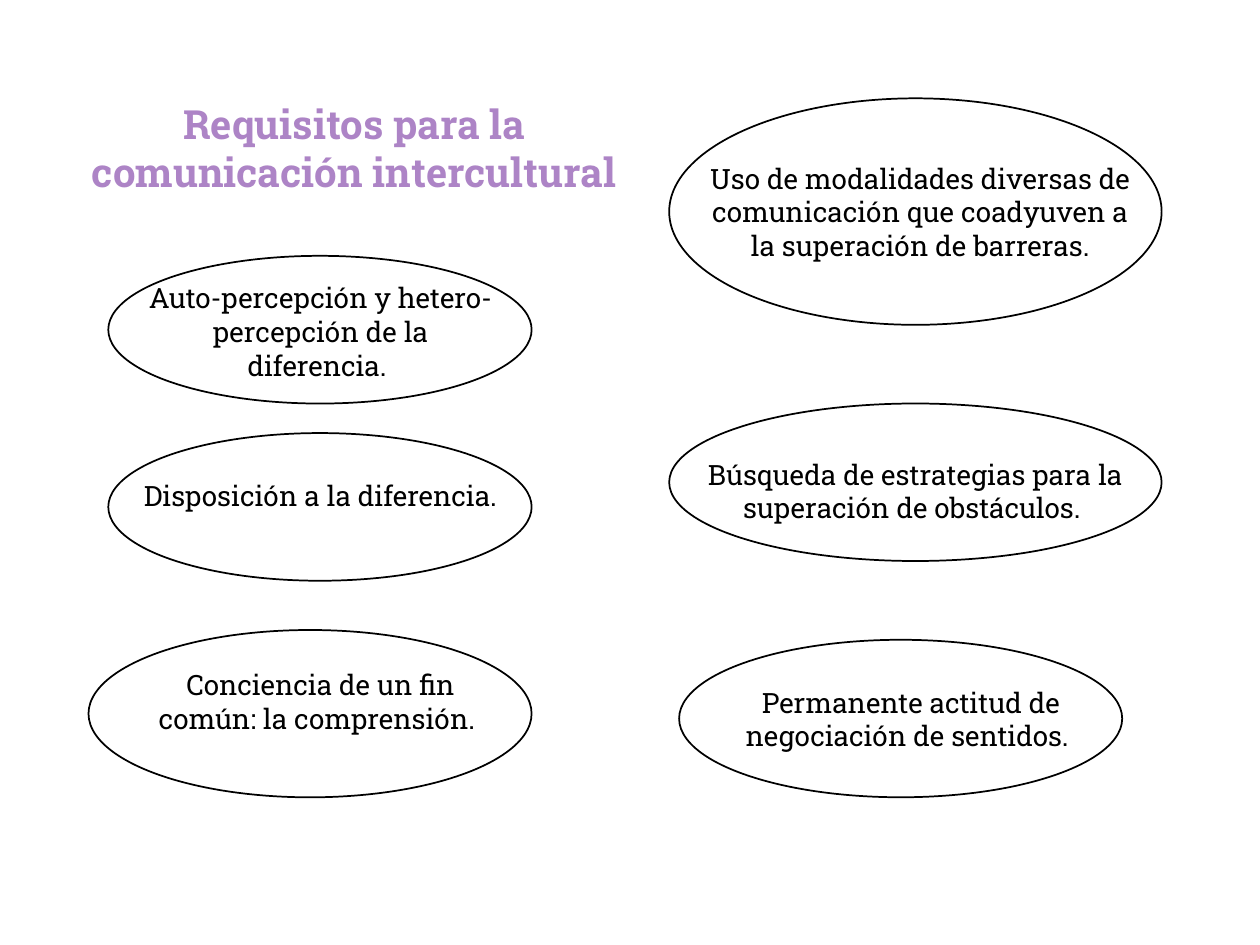
from pptx import Presentation
from pptx.dml.color import RGBColor
from pptx.enum.shapes import MSO_SHAPE as Shape
from pptx.enum.text import MSO_AUTO_SIZE as Fit, PP_ALIGN as Align
from pptx.util import Pt


def color(code):
    return RGBColor.from_string(code)


def write(text, box, size=16, bold=False, tint="000000"):
    frame = slide.shapes.add_textbox(*map(Pt, box)).text_frame
    frame.word_wrap = True
    frame.auto_size = Fit.SHAPE_TO_FIT_TEXT
    line = frame.paragraphs[0]
    line.alignment = Align.CENTER
    run = line.add_run()
    run.text = text
    run.font.name = "Roboto Slab"
    run.font.size = Pt(size)
    run.font.bold = bold
    run.font.color.rgb = color(tint)


deck = Presentation()
deck.slide_width, deck.slide_height = Pt(720), Pt(540)
slide = deck.slides.add_slide(deck.slide_layouts[6])

ideas = [
    ("Auto-percepción y hetero-percepción de la diferencia. ",
     (61.9, 146.2, 241.9, 84.4), (73.4, 157, 219.6, 65.5)),
    ("Disposición a la diferencia. ",
     (61.9, 247.5, 241.9, 84.4), (73.4, 270, 219.6, 46)),
    ("Conciencia de un fin común: la comprensión. ",
     (50.6, 360, 253.2, 95.6), (73.4, 378, 219.6, 46)),
    ("Uso de modalidades diversas de comunicación que coadyuven a la superación de barreras.",
     (382.4, 56.2, 281.4, 129.4), (393.8, 88.6, 264.2, 85)),
    ("Búsqueda de estrategias para la superación de obstáculos. ",
     (382.4, 230.6, 281.4, 90), (362.9, 257.8, 320.4, 46)),
    ("Permanente actitud de negociación de sentidos. ",
     (388.1, 365.6, 253.2, 90), (393.8, 388.1, 253.4, 46)),
]

write("Requisitos para la comunicación intercultural",
      (36.7, 53.3, 331.9, 63.4), size=23, bold=True, tint="AD84C6")

for text, ring, box in ideas:
    oval = slide.shapes.add_shape(Shape.OVAL, *map(Pt, ring))
    oval.shadow.inherit = False
    oval.fill.solid()
    oval.fill.fore_color.rgb = color("FFFFFF")
    oval.line.color.rgb = color("000000")
    oval.line.width = Pt(1)
    write(text, box)

deck.save("out.pptx")
